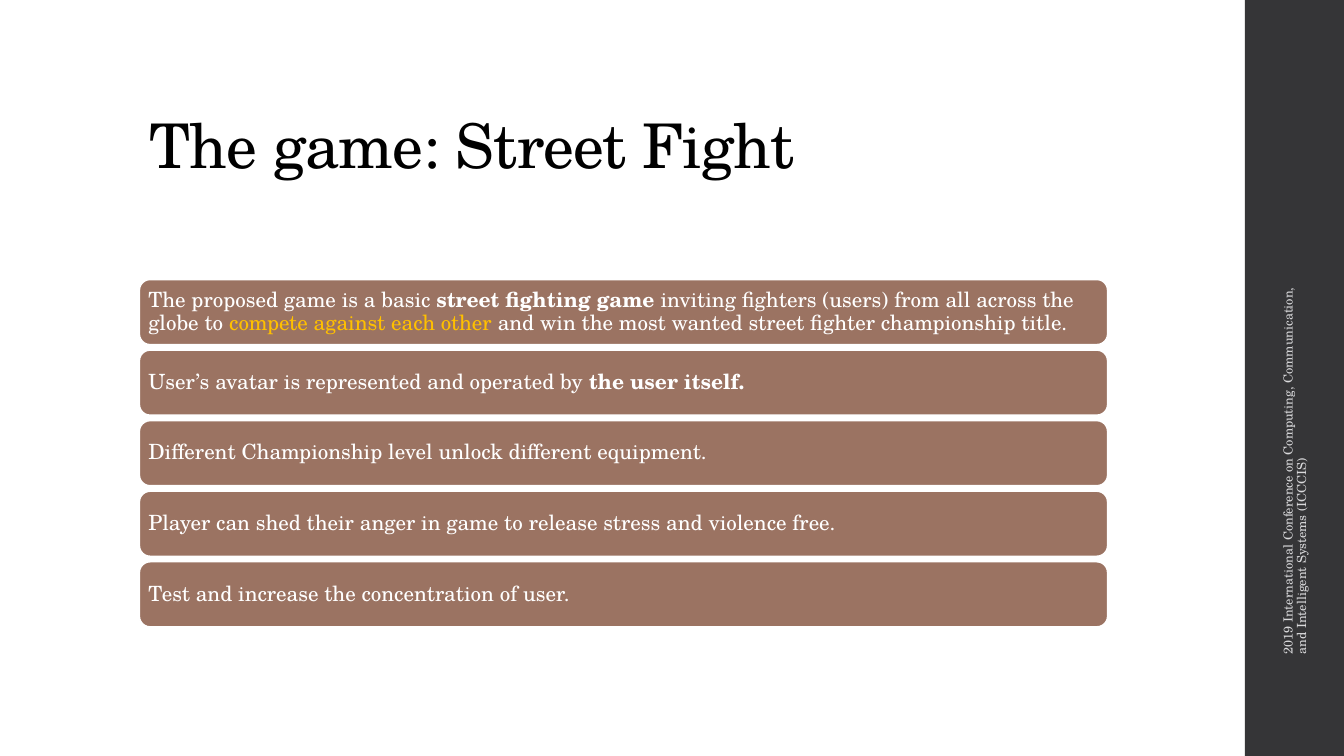
from pptx import Presentation
from pptx.dml.color import RGBColor
from pptx.enum.shapes import MSO_SHAPE as Shape
from pptx.enum.text import MSO_ANCHOR as Anchor, MSO_AUTO_SIZE as AutoSize, PP_ALIGN as Align
from pptx.util import Pt

FONT = "TeX Gyre Schola"
COLORS = {
    "black": "000000",
    "white": "FFFFFF",
    "sidebar": "353537",
    "credit": "D9D9DB",
    "bar": "9B7362",
    "accent": "FFC000",
}

# Each statement is a list of (text, color, bold) runs
STATEMENTS = [
    [
        ("The proposed game is a basic ", "white", False),
        ("street fighting game", "white", True),
        (" inviting fighters (users) from all across the globe to", "white", False),
        (" compete against each other", "accent", False),
        (" and win the most wanted street fighter championship title.", "white", False),
    ],
    [
        ("User’s avatar is represented and operated by ", "white", False),
        ("the user itself.", "white", True),
    ],
    [("Different Championship level unlock different equipment.", "white", False)],
    [("Player can shed their anger in game to release stress and violence free.", "white", False)],
    [("Test and increase the concentration of user.", "white", False)],
]
BAR_LEFT, BAR_TOP, BAR_WIDTH, BAR_HEIGHT = 99.4, 199.5, 691.9, 46.8
BAR_PITCH = 50.4


def color(name):
    return RGBColor.from_string(COLORS[name])


def format_run(run, size, color_name, bold=False):
    run.font.name = FONT
    run.font.size = Pt(size)
    run.font.bold = bold
    run.font.color.rgb = color(color_name)


def format_paragraph(paragraph):
    paragraph.alignment = Align.LEFT
    paragraph.line_spacing = 0.9


def set_title(slide, text):
    title = slide.shapes.title
    title.left, title.top, title.width, title.height = Pt(99.4), Pt(28.8), Pt(763.2), Pt(104.4)
    frame = title.text_frame
    frame.text = text
    frame.auto_size = AutoSize.NONE
    frame.vertical_anchor = Anchor.BOTTOM
    format_paragraph(frame.paragraphs[0])
    run = frame.paragraphs[0].runs[0]
    format_run(run, 44, "black")
    # Letter spacing of -0.5 pt
    run._r.get_or_add_rPr().set("spc", "-50")


def add_block(slide, kind, left, top, width, height, fill):
    block = slide.shapes.add_shape(kind, Pt(left), Pt(top), Pt(width), Pt(height))
    block.shadow.inherit = False
    block.fill.solid()
    block.fill.fore_color.rgb = color(fill)
    block.line.fill.background()
    return block


def add_statement(slide, top, runs):
    bar = add_block(slide, Shape.ROUNDED_RECTANGLE, BAR_LEFT, top, BAR_WIDTH, BAR_HEIGHT, "bar")
    bar.line.color.rgb = color("white")
    bar.line.width = Pt(1.35)
    frame = bar.text_frame
    frame.word_wrap = True
    frame.vertical_anchor = Anchor.MIDDLE
    frame.margin_left = frame.margin_right = Pt(4.3)
    frame.margin_top = frame.margin_bottom = Pt(4.3)
    paragraph = frame.paragraphs[0]
    format_paragraph(paragraph)
    for text, color_name, bold in runs:
        run = paragraph.add_run()
        run.text = text
        format_run(run, 15, color_name, bold)


def add_credit(slide, text):
    box = slide.shapes.add_textbox(Pt(784.1), Pt(319), Pt(282.2), Pt(28.8))
    box.rotation = 270
    frame = box.text_frame
    frame.text = text
    frame.word_wrap = True
    frame.vertical_anchor = Anchor.MIDDLE
    paragraph = frame.paragraphs[0]
    format_paragraph(paragraph)
    paragraph.space_after = Pt(6)
    format_run(paragraph.runs[0], 9, "credit")


def main():
    presentation = Presentation()
    presentation.slide_width, presentation.slide_height = Pt(960), Pt(540)
    slide = presentation.slides.add_slide(presentation.slide_layouts[5])

    # Sidebar with the conference name
    add_block(slide, Shape.RECTANGLE, 889.2, 0, 72, 540, "sidebar")
    add_credit(
        slide,
        "2019 International Conference on Computing, Communication, "
        "and Intelligent Systems (ICCCIS)",
    )

    # Title and the stack of statements
    set_title(slide, "The game: Street Fight")
    for index, runs in enumerate(STATEMENTS):
        add_statement(slide, BAR_TOP + index * BAR_PITCH, runs)

    presentation.save("out.pptx")


if __name__ == "__main__":
    main()
